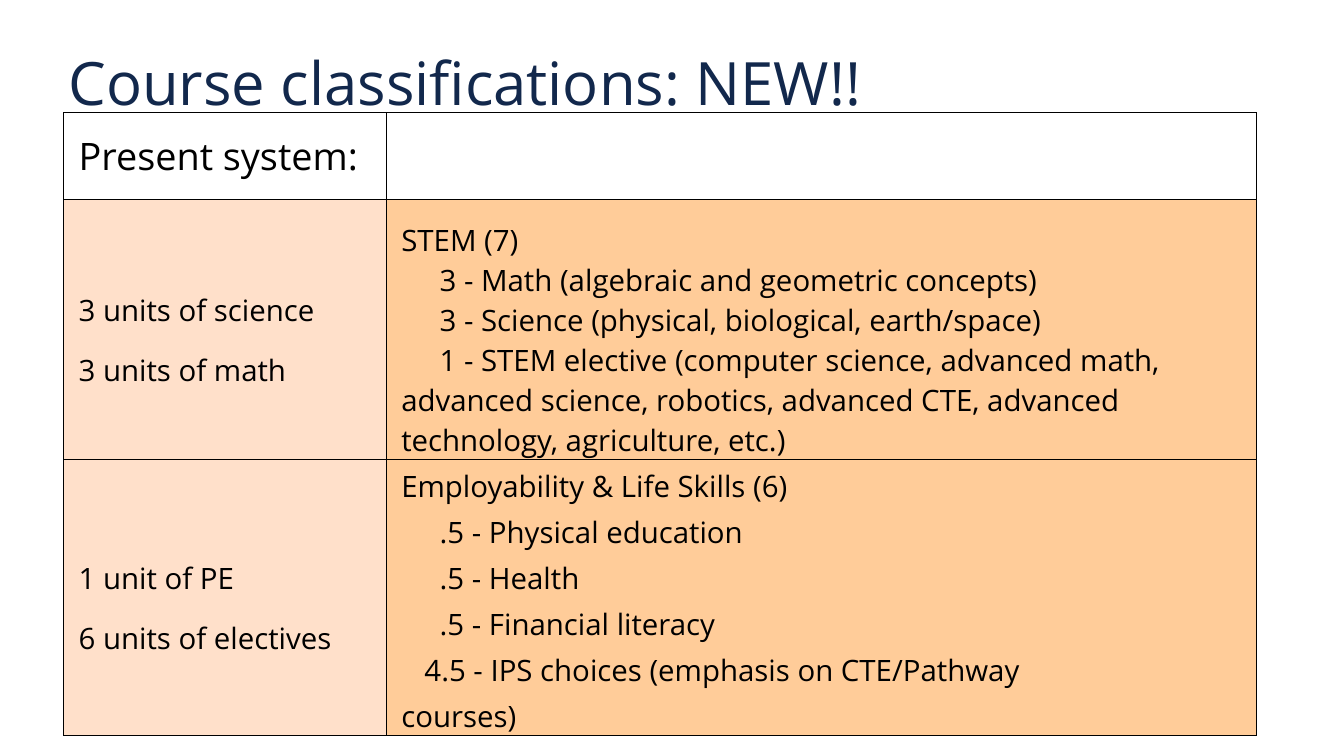
"""Build the course classifications slide with its comparison table."""
from lxml.etree import SubElement
from pptx import Presentation
from pptx.dml.color import RGBColor
from pptx.enum.text import MSO_ANCHOR as ANCHOR
from pptx.oxml.ns import qn
from pptx.util import Inches, Pt

NAVY = RGBColor(0x12, 0x28, 0x4C)
BLACK = RGBColor(0, 0, 0)
WHITE = RGBColor(0xFF, 0xFF, 0xFF)
PEACH = RGBColor(0xFF, 0xE0, 0xCA)
ORANGE = RGBColor(0xFF, 0xCC, 0x99)
FONT = "Open Sans"


def set_font(p, size, color):
    p.font.name = FONT
    p.font.size = Pt(size)
    p.font.color.rgb = color


def add_borders(cell):
    tc_pr = cell._tc.get_or_add_tcPr()
    for side in ("lnL", "lnR", "lnT", "lnB"):
        ln = SubElement(tc_pr, qn(f"a:{side}"), w=str(Pt(0.75)))
        fill = SubElement(ln, qn("a:solidFill"))
        SubElement(fill, qn("a:srgbClr"), val=str(BLACK))


prs = Presentation()
prs.slide_width, prs.slide_height = Inches(13.33), Inches(7.5)
s = prs.slides.add_slide(prs.slide_layouts[6])

title = s.shapes.add_textbox(Inches(0.63), Inches(0.27), Inches(10.16), Inches(1.17))
tf = title.text_frame
tf.word_wrap = True
tf.vertical_anchor = ANCHOR.MIDDLE
tf.margin_left = tf.margin_right = tf.margin_top = tf.margin_bottom = Inches(0.05)
p = tf.paragraphs[0]
p.text = "Course classifications: NEW!!"
p.line_spacing = 0.9
set_font(p, 42.7, NAVY)

# Each line holds its first-line indent, line spacing and text.
rows = [
    (27, [
        (WHITE, [(0, 1.0, "Present system:")]),
        (WHITE, []),
    ]),
    (21, [
        (PEACH, [(0, 1.5, "3 units of science"), (0, 1.5, "3 units of math")]),
        (ORANGE, [
            (0, 1.5, "STEM (7)"),
            (0.38, 1.0, "3 - Math (algebraic and geometric concepts)"),
            (0.38, 1.0, "3 - Science (physical, biological, earth/space)"),
            (0.38, 1.0, "1 - STEM elective (computer science, advanced math, "
                        "advanced science, robotics, advanced CTE, advanced "
                        "technology, agriculture, etc.)"),
        ]),
    ]),
    (21, [
        (PEACH, [(0, 1.5, "1 unit of PE"), (0, 1.5, "6 units of electives")]),
        (ORANGE, [
            (0, 1.15, "Employability & Life Skills (6)"),
            (0.38, 1.15, ".5 - Physical education"),
            (0.38, 1.15, ".5 - Health"),
            (0.38, 1.15, ".5 - Financial literacy"),
            (0.23, 1.15, "4.5 - IPS choices (emphasis on CTE/Pathway\vcourses)"),
        ]),
    ]),
]
col_widths = [3.2, 8.63]
row_heights = [0.86, 2.58, 2.74]

table = s.shapes.add_table(
    len(row_heights), len(col_widths), Inches(0.63), Inches(1.12),
    Inches(sum(col_widths)), Inches(sum(row_heights))).table
table.first_row = table.horz_banding = False
for col, width in zip(table.columns, col_widths):
    col.width = Inches(width)
for row, height in zip(table.rows, row_heights):
    row.height = Inches(height)

for i, (size, cells) in enumerate(rows):
    for j, (color, lines) in enumerate(cells):
        cell = table.cell(i, j)
        add_borders(cell)
        cell.fill.solid()
        cell.fill.fore_color.rgb = color
        cell.vertical_anchor = ANCHOR.MIDDLE
        cell.margin_left = cell.margin_right = cell.margin_top = cell.margin_bottom = 0
        tf = cell.text_frame
        for n, (indent, spacing, text) in enumerate(lines):
            p = tf.add_paragraph() if n else tf.paragraphs[0]
            p.text = text
            p.line_spacing = spacing
            p_pr = p._p.get_or_add_pPr()
            p_pr.set("marL", str(Inches(0.15)))
            p_pr.set("indent", str(Inches(indent)))
            set_font(p, size, BLACK)

prs.save("out.pptx")
